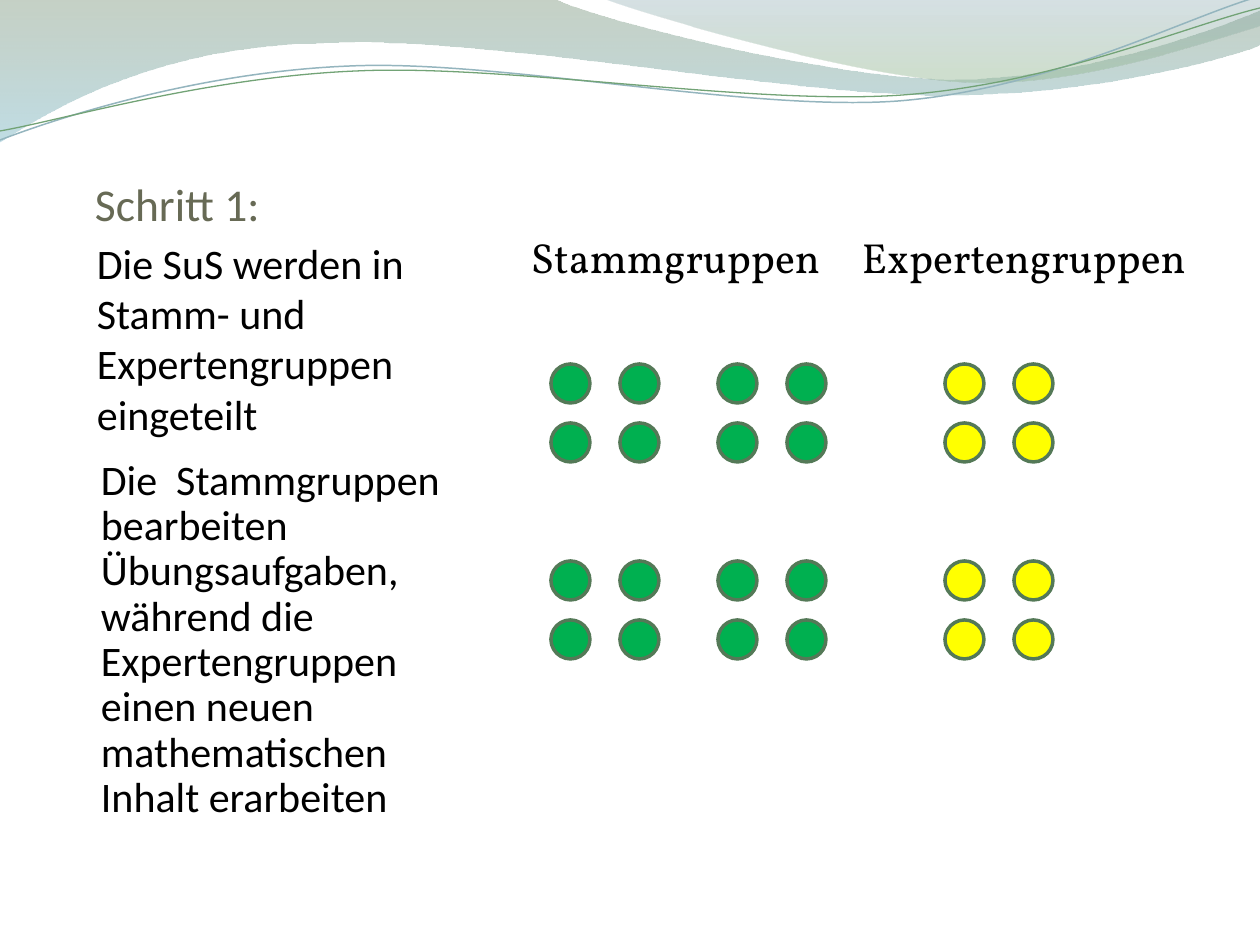
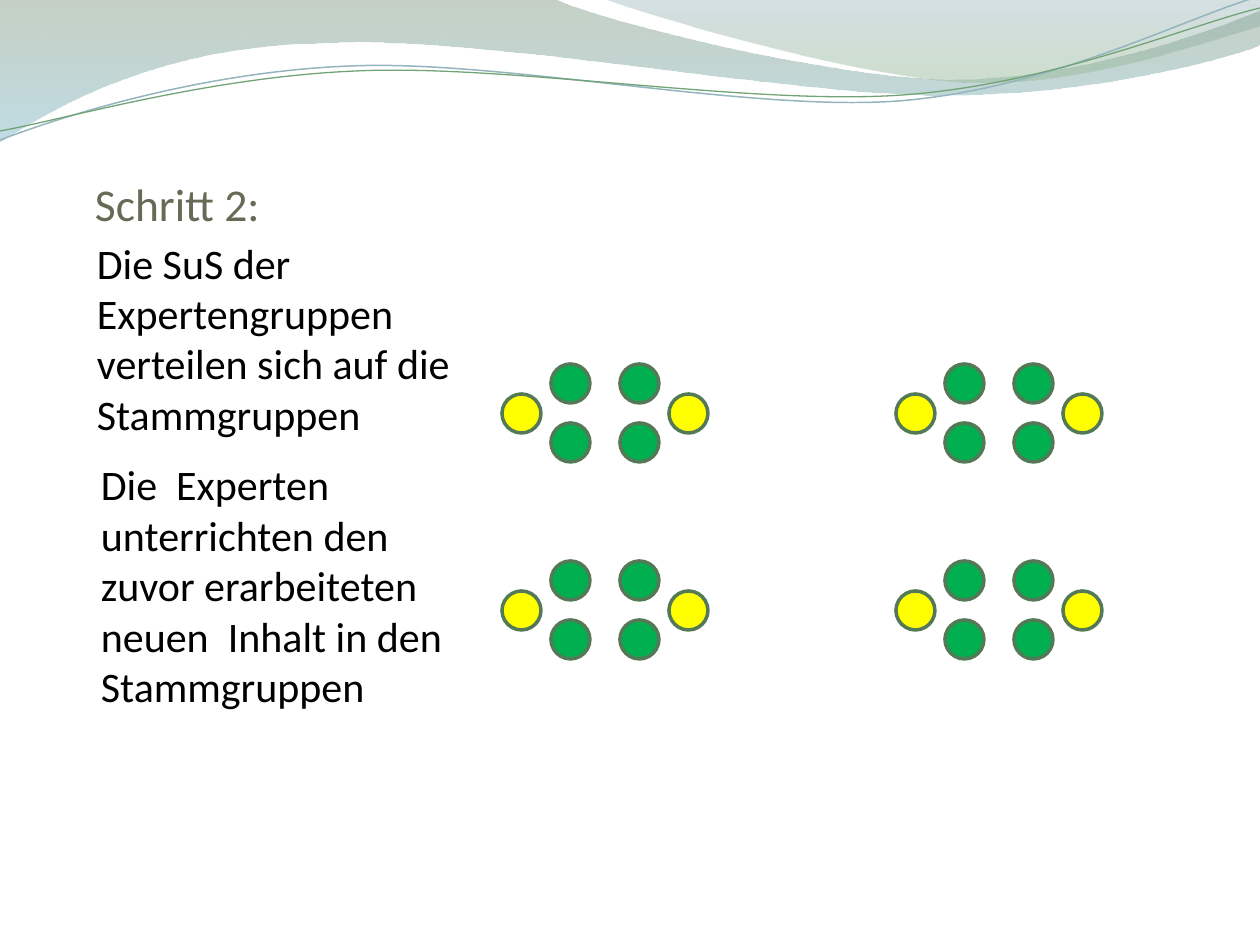
from itertools import chain, product

from lxml.etree import Element, SubElement
from pptx import Presentation
from pptx.dml.color import RGBColor
from pptx.enum.shapes import MSO_SHAPE
from pptx.enum.text import MSO_ANCHOR, PP_ALIGN
from pptx.oxml.ns import qn
from pptx.util import Emu, Pt

PX_PER_INCH = 126
EMU_PER_PX = 914400 / PX_PER_INCH

BLACK = RGBColor(0x00, 0x00, 0x00)
OLIVE = RGBColor(0x67, 0x6A, 0x55)
GREEN = RGBColor(0x00, 0xB0, 0x50)
YELLOW = RGBColor(0xFF, 0xFF, 0x00)
RIM = RGBColor(0x54, 0x79, 0x57)
SAGE = RGBColor(0x80, 0x99, 0x80)
AQUA = RGBColor(0x8D, 0xC1, 0xCF)
STEEL = RGBColor(0x77, 0x9B, 0xA4)
LEAF = RGBColor(0x96, 0xB9, 0x96)
BLUE_LINE = RGBColor(0x94, 0xB5, 0xBE)
GREEN_LINE = RGBColor(0x72, 0xA3, 0x76)

BODY_FONT = "Calibri"
HEADING_FONT = "Vollkorn"

DOT = 39
DOT_STEP_X, DOT_STEP_Y = 69, 59
GROUP_ROWS = (364, 561)
LEFT_GROUP, MIDDLE_GROUP, RIGHT_GROUP = 551, 718, 945
EXPERT_SEATS = ((-49, 30), (118, 30))

WIDE_BAND = [
    [(0, 0)],
    [(554, -1)],
    [(600, 21), (837, 79), (955, 79)],
    [(1075, 79), (1207, 33), (1260, 11)],
    [(1261, 45)],
    [(1239, 55), (1096, 96), (940, 95)],
    [(784, 95), (481, 35), (324, 43)],
    [(163, 45), (58, 105), (-1, 142)],
]
RIGHT_BAND = [
    [(604, -1)],
    [(641, 14), (859, 78), (969, 82)],
    [(1079, 87), (1211, 40), (1260, 26)],
    [(1260, 0)],
]
BLUE_CURVE = [
    [(0, 140)],
    [(60, 117), (199, 72), (349, 66)],
    [(498, 59), (747, 112), (898, 101)],
    [(1050, 89), (1182, 19), (1257, -3)],
]
GREEN_CURVE = [
    [(0, 131)],
    [(59, 121), (207, 77), (357, 71)],
    [(508, 64), (752, 106), (903, 95)],
    [(1053, 84), (1186, 26), (1260, 8)],
]


def px(n):
    return Emu(round(n * EMU_PER_PX))


def bend_lines(s, segments):
    lines = iter(list(s.element.iter(qn("a:lnTo"))))
    for segment in segments:
        group = [next(lines) for _ in segment]
        if len(group) == 3:
            curve = Element(qn("a:cubicBezTo"))
            group[0].addprevious(curve)
            for line in group:
                curve.append(line[0])
                line.getparent().remove(line)


def add_wave(slide, segments, close):
    start, *rest = [(px(x), px(y)) for x, y in chain.from_iterable(segments)]
    builder = slide.shapes.build_freeform(*start, scale=1.0)
    builder.add_line_segments(rest, close=close)
    s = builder.convert_to_shape()
    bend_lines(s, segments[1:])
    s.shadow.inherit = False
    return s


def add_band(slide, segments, *stops):
    s = add_wave(slide, segments, True)
    s.line.fill.background()
    s.fill.gradient()
    s.fill.gradient_angle = 270
    for stop, (position, color, _) in zip(s.fill.gradient_stops, stops):
        stop.position = position
        stop.color.rgb = color
    colors = s.element.spPr.iter(qn("a:srgbClr"))
    for node, (_, _, opacity) in zip(colors, stops):
        SubElement(node, qn("a:alpha"), val=str(opacity * 1000))
    return s


def add_curve(slide, segments, color, width):
    s = add_wave(slide, segments, False)
    s.fill.background()
    s.line.color.rgb = color
    s.line.width = Pt(width)
    return s


def decorate_layout(layout, slide):
    waves = [
        add_band(slide, WIDE_BAND, (0, SAGE, 45), (1, AQUA, 55)),
        add_band(slide, RIGHT_BAND, (0, STEEL, 30), (0.8, LEAF, 45)),
        add_curve(slide, BLUE_CURVE, BLUE_LINE, 0.85),
        add_curve(slide, GREEN_CURVE, GREEN_LINE, 0.75),
    ]
    for i, s in enumerate(waves, 2):
        layout.shapes.element.insert(i, s.element)


def place(s, left, top, width, height):
    s.left, s.top, s.width, s.height = map(px, (left, top, width, height))


def set_text(tf, text, font, size, color, insets):
    tf.word_wrap = True
    tf.margin_left, tf.margin_top, tf.margin_right, tf.margin_bottom = map(px, insets)
    p = tf.paragraphs[0]
    p.text = text
    p.alignment = PP_ALIGN.LEFT
    p.font.name, p.font.size, p.font.color.rgb = font, Pt(size), color
    return p


def set_title(slide, text):
    s = slide.shapes.title
    place(s, 95, 71, 378, 160)
    s.text_frame.vertical_anchor = MSO_ANCHOR.BOTTOM
    set_text(s.text_frame, text, BODY_FONT, 26, OLIVE, (0, 6, 0, 0))


def add_text(slide, text, box, font=BODY_FONT, insets=(3, 6, 3, 6), spacing=None):
    s = slide.shapes.add_textbox(*map(px, box))
    p = set_text(s.text_frame, text, font, 24, BLACK, insets)
    p.space_before = Pt(1.2)
    p.line_spacing = spacing
    return p


def add_tab_stop(p, position):
    tabs = Element(qn("a:tabLst"))
    SubElement(tabs, qn("a:tab"), pos=str(px(position)), algn="l")
    p.font  
    next(p._p.iter(qn("a:defRPr"))).addprevious(tabs)


def add_dot(slide, left, top, color):
    s = slide.shapes.add_shape(MSO_SHAPE.OVAL, *map(px, (left, top, DOT, DOT)))
    s.shadow.inherit = False
    s.fill.solid()
    s.fill.fore_color.rgb = color
    s.line.color.rgb = RIM
    s.line.width = Pt(2)


def add_group(slide, left, top, color):
    for row, col in product(range(2), repeat=2):
        add_dot(slide, left + col * DOT_STEP_X, top + row * DOT_STEP_Y, color)


def add_mixed_group(slide, left, top):
    add_group(slide, left, top, GREEN)
    for dx, dy in EXPERT_SEATS:
        add_dot(slide, left + dx, top + dy, YELLOW)


def add_step(slide, title, first, second, second_height, spacing=None):
    set_title(slide, title)
    add_text(slide, first, (94, 231, 378, 222))
    add_text(slide, second, (98, 453, 378, second_height), spacing=spacing)


def build_step_1(slide):
    add_step(
        slide, "Schritt 1:",
        "Die SuS werden in Stamm- und Expertengruppen eingeteilt",
        "Die  Stammgruppen  bearbeiten Übungsaufgaben, während die  "
        "Expertengruppen  einen neuen mathematischen  Inhalt erarbeiten",
        403, 0.9)
    heading = add_text(slide, "Stammgruppen\tExpertengruppen",
                       (493, 232, 728, 630), HEADING_FONT, (38, 0, 13, 6))
    add_tab_stop(heading, 331)
    groups = ((LEFT_GROUP, GREEN), (MIDDLE_GROUP, GREEN), (RIGHT_GROUP, YELLOW))
    for (left, color), top in product(groups, GROUP_ROWS):
        add_group(slide, left, top, color)


def build_step_2(slide):
    add_step(
        slide, "Schritt 2:",
        "Die SuS der  Expertengruppen  verteilen sich auf die Stammgruppen",
        "Die  Experten unterrichten den zuvor erarbeiteten neuen  Inhalt "
        "in den Stammgruppen",
        276)
    for left, top in product((LEFT_GROUP, RIGHT_GROUP), GROUP_ROWS):
        add_mixed_group(slide, left, top)


def main():
    prs = Presentation()
    prs.slide_width, prs.slide_height = px(1260), px(945)
    layout = prs.slide_layouts[5]
    step_1, step_2 = (prs.slides.add_slide(layout) for _ in range(2))
    decorate_layout(layout, step_1)
    build_step_1(step_1)
    build_step_2(step_2)
    prs.save("out.pptx")


if __name__ == "__main__":
    main()
